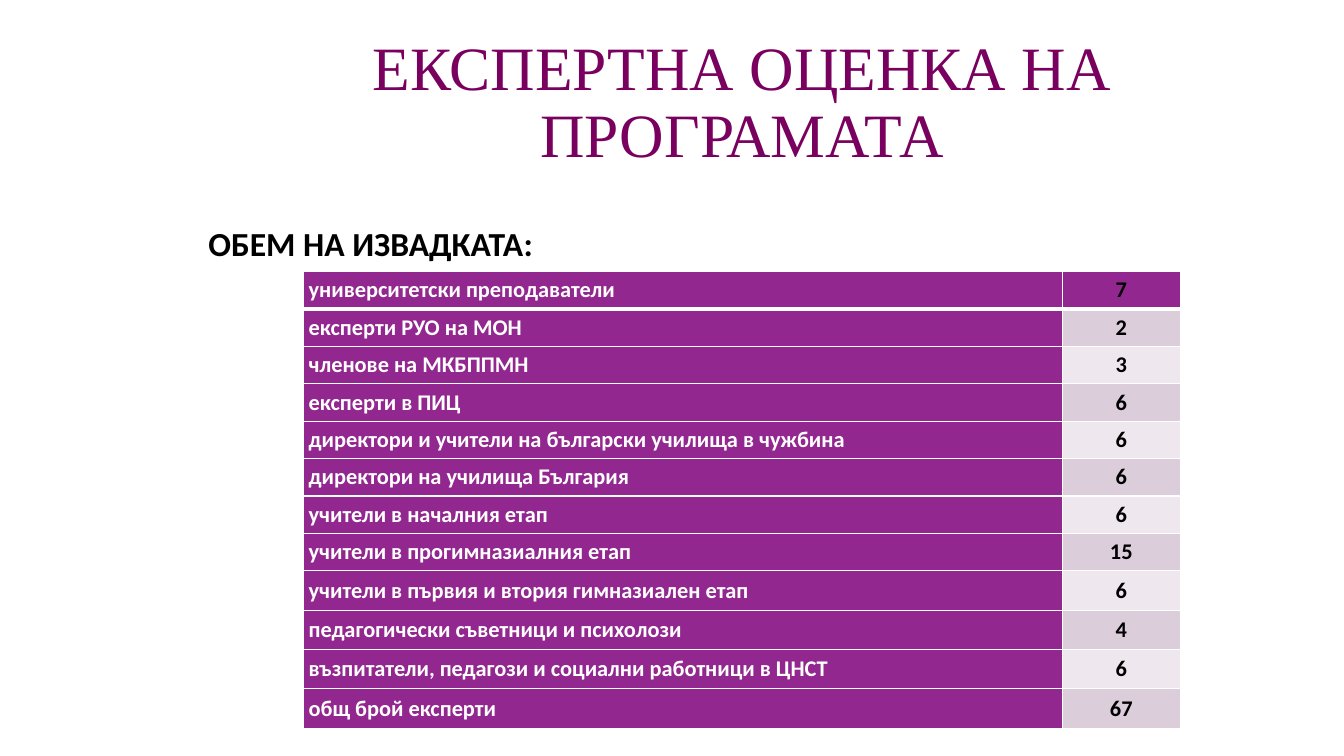
from pptx import Presentation
from pptx.dml.color import RGBColor
from pptx.enum.text import MSO_ANCHOR, PP_ALIGN
from pptx.oxml import parse_xml
from pptx.oxml.ns import nsdecls
from pptx.util import Pt

TITLE = "ЕКСПЕРТНА ОЦЕНКА НА ПРОГРАМАТА"
SUBTITLE = "ОБЕМ НА ИЗВАДКАТА:"
EXPERTS = [
    ("университетски преподаватели", 7),
    ("експерти РУО на МОН", 2),
    ("членове на МКБППМН", 3),
    ("експерти в ПИЦ", 6),
    ("директори и учители на български училища в чужбина", 6),
    ("директори на училища България", 6),
    ("учители в началния етап", 6),
    ("учители в прогимназиалния етап", 15),
    ("учители в първия и втория гимназиален етап", 6),
    ("педагогически съветници и психолози", 4),
    ("възпитатели, педагози и социални работници в ЦНСТ", 6),
    ("общ брой експерти", 67),
]
PURPLE, WHITE, BLACK, PLUM = "92278F", "FFFFFF", "000000", "7A005F"
BANDS = ("EEE8EE", "DCCDDB")
LEFT = 141.8
COLUMN_WIDTHS = (541.8, 84.5)
ROW_HEIGHT, TALL_ROW_HEIGHT, TALL_ROWS = 26.75, 28.1, 4


def color(value):
    return RGBColor.from_string(value)


def format_text(paragraph, name, size, fill, bold):
    for run in paragraph.runs:
        font = run.font
        font.name, font.size, font.bold = name, Pt(size), bold
        font.color.rgb = color(fill)


def set_borders(cell, bottom_width):
    properties = cell._tc.get_or_add_tcPr()
    widths = {"lnL": 1, "lnR": 1, "lnT": 1, "lnB": bottom_width}
    for index, (side, width) in enumerate(widths.items()):
        properties.insert(index, parse_xml(
            f'<a:{side} {nsdecls("a")} w="{Pt(width)}"><a:solidFill>'
            f'<a:srgbClr val="{WHITE}"/></a:solidFill></a:{side}>'))


def fill_cell(cell, text, fill, text_color, alignment, bottom_width):
    cell.fill.solid()
    cell.fill.fore_color.rgb = color(fill)
    cell.vertical_anchor = MSO_ANCHOR.MIDDLE
    cell.margin_left = cell.margin_right = Pt(3.6)
    cell.margin_top = cell.margin_bottom = 0
    cell.text_frame.text = text
    paragraph = cell.text_frame.paragraphs[0]
    paragraph.alignment = alignment
    paragraph.space_after = Pt(10)
    format_text(paragraph, "Calibri", 16, text_color, True)
    set_borders(cell, bottom_width)


def add_title(slide):
    title = slide.shapes.title
    title.left, title.top, title.width, title.height = Pt(LEFT), Pt(22.3), Pt(776.9), Pt(104.4)
    title.text_frame.text = TITLE
    title.text_frame.vertical_anchor = MSO_ANCHOR.MIDDLE
    paragraph = title.text_frame.paragraphs[0]
    paragraph.alignment = PP_ALIGN.CENTER
    paragraph.line_spacing = 0.9
    format_text(paragraph, "Times New Roman", 44, PLUM, False)


def add_subtitle(slide):
    box = slide.shapes.add_textbox(Pt(LEFT), Pt(155.5), Pt(279.4), Pt(36))
    box.text_frame.word_wrap = True
    box.text_frame.text = SUBTITLE
    format_text(box.text_frame.paragraphs[0], "Calibri", 24, BLACK, True)


def add_expert_table(slide):
    row_count = len(EXPERTS)
    heights = [ROW_HEIGHT] * (row_count - TALL_ROWS) + [TALL_ROW_HEIGHT] * TALL_ROWS
    table = slide.shapes.add_table(
        row_count, len(COLUMN_WIDTHS), Pt(216.9), Pt(193.9),
        Pt(sum(COLUMN_WIDTHS)), Pt(sum(heights))).table
    for column, width in zip(table.columns, COLUMN_WIDTHS):
        column.width = Pt(width)
    for index, (group, count) in enumerate(EXPERTS):
        table.rows[index].height = Pt(heights[index])
        bottom_width = 3 if index == 0 else 1
        count_fill = PURPLE if index == 0 else BANDS[index % 2]
        fill_cell(table.cell(index, 0), group, PURPLE, WHITE, PP_ALIGN.LEFT, bottom_width)
        fill_cell(table.cell(index, 1), str(count), count_fill, BLACK, PP_ALIGN.CENTER, bottom_width)


def main():
    presentation = Presentation()
    presentation.slide_width, presentation.slide_height = Pt(960), Pt(540)
    slide = presentation.slides.add_slide(presentation.slide_layouts[5])
    add_title(slide)
    add_expert_table(slide)
    add_subtitle(slide)
    presentation.save("out.pptx")


if __name__ == "__main__":
    main()
